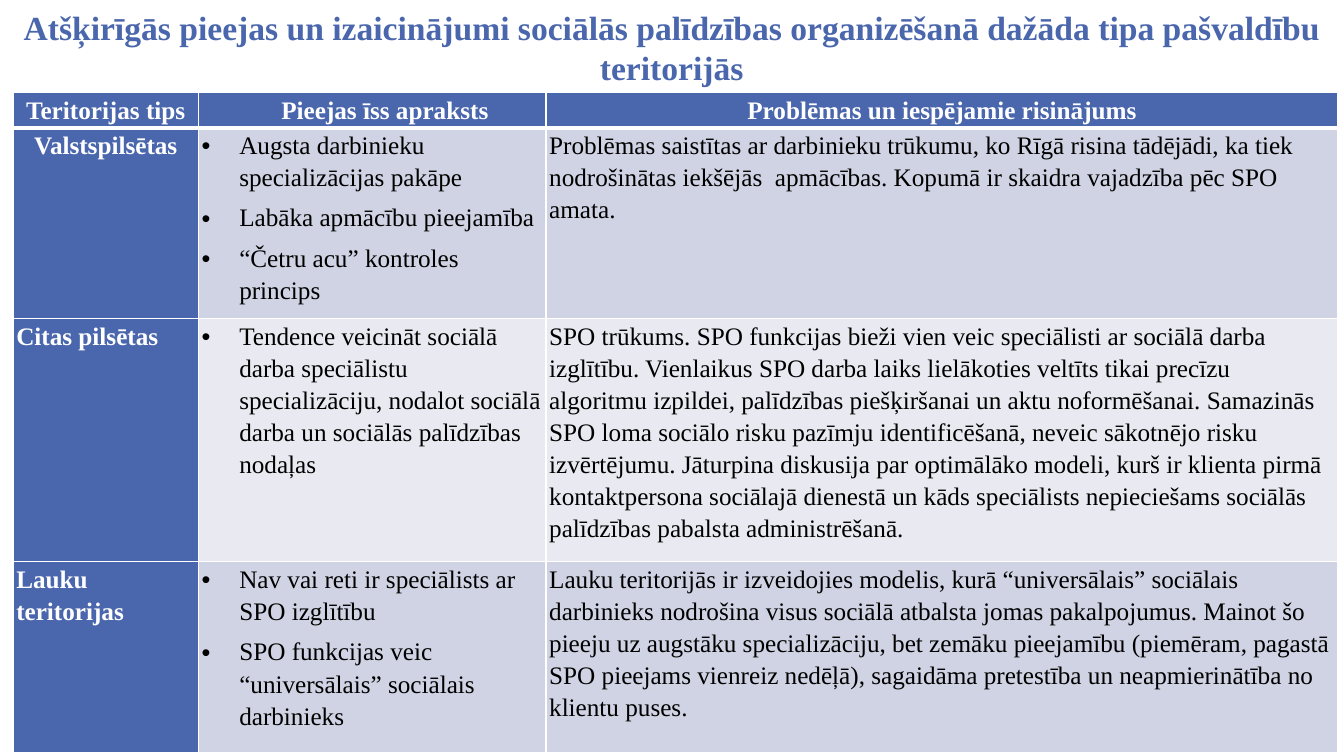
from lxml import etree
from pptx import Presentation
from pptx.dml.color import RGBColor
from pptx.enum.text import MSO_ANCHOR, PP_ALIGN
from pptx.oxml.ns import qn
from pptx.util import Cm, Pt

CENTER, LEFT = PP_ALIGN.CENTER, PP_ALIGN.LEFT
TOP = MSO_ANCHOR.TOP

COLORS = {"blue": "4A66AC", "white": "FFFFFF", "black": "000000",
          "dark_band": "D0D3E3", "light_band": "E9EAF1"}
FONT = "Times New Roman"
TITLE = ("Atšķirīgās pieejas un izaicinājumi sociālās palīdzības organizēšanā "
         "dažāda tipa pašvaldību teritorijās")
HEADINGS = ["Teritorijas tips", "Pieejas īss apraksts",
            "Problēmas un iespējamie risinājums"]
# Territory, approaches, problems and solutions
TERRITORIES = [
    ("Valstspilsētas",
     ["Augsta darbinieku specializācijas pakāpe",
      "Labāka apmācību pieejamība",
      "“Četru acu” kontroles princips"],
     "Problēmas saistītas ar darbinieku trūkumu, ko Rīgā risina tādējādi, ka tiek "
     "nodrošinātas iekšējās  apmācības. Kopumā ir skaidra vajadzība pēc SPO amata."),
    ("Citas pilsētas",
     ["Tendence veicināt sociālā darba speciālistu specializāciju, nodalot sociālā "
      "darba un sociālās palīdzības nodaļas"],
     "SPO trūkums. SPO funkcijas bieži vien veic speciālisti ar sociālā darba "
     "izglītību. Vienlaikus SPO darba laiks lielākoties veltīts tikai precīzu "
     "algoritmu izpildei, palīdzības piešķiršanai un aktu noformēšanai. Samazinās "
     "SPO loma sociālo risku pazīmju identificēšanā, neveic sākotnējo risku "
     "izvērtējumu. Jāturpina diskusija par optimālāko modeli, kurš ir klienta pirmā "
     "kontaktpersona sociālajā dienestā un kāds speciālists nepieciešams sociālās "
     "palīdzības pabalsta administrēšanā."),
    ("Lauku teritorijas",
     ["Nav vai reti ir speciālists ar SPO izglītību",
      "SPO funkcijas veic “universālais” sociālais darbinieks"],
     "Lauku teritorijās ir izveidojies modelis, kurā “universālais” sociālais "
     "darbinieks nodrošina visus sociālā atbalsta jomas pakalpojumus. Mainot šo "
     "pieeju uz augstāku specializāciju, bet zemāku pieejamību (piemēram, pagastā "
     "SPO pieejams vienreiz nedēļā), sagaidāma pretestība un neapmierinātība no "
     "klientu puses."),
]
COLUMN_WIDTHS = [4.67, 8.76, 19.96]
ROW_HEIGHTS = [0.81, 4.72, 6.05, 4.8]


def set_values(target, values):
    for name, value in values.items():
        setattr(target, name, value)


def add_span(para, text, size, color, bold):
    span = para.add_run()
    span.text = text
    set_values(span.font, {"name": FONT, "size": Pt(size), "bold": bold})
    span.font.color.rgb = RGBColor.from_string(COLORS[color])


def set_indent(para, left, first=0, bullet=None):
    properties = para._p.get_or_add_pPr()
    properties.set("marL", str(Cm(left)))
    properties.set("indent", str(Cm(first)))
    if bullet:
        etree.SubElement(properties, qn("a:buFont"), typeface="Arial")
        etree.SubElement(properties, qn("a:buChar"), char=bullet)


def set_borders(cell, bottom):
    properties = cell._tc.get_or_add_tcPr()
    for side, width in (("L", 1), ("R", 1), ("T", 1), ("B", bottom)):
        line = etree.SubElement(properties, qn(f"a:ln{side}"), w=str(Pt(width)))
        fill = etree.SubElement(line, qn("a:solidFill"))
        etree.SubElement(fill, qn("a:srgbClr"), val=COLORS["white"])


def fill_cell(cell, texts, fill, color="black", bold=False, align=LEFT,
              indent=None, border=1):
    set_borders(cell, border)
    cell.fill.solid()
    cell.fill.fore_color.rgb = RGBColor.from_string(COLORS[fill])
    set_values(cell, {"margin_left": Cm(0.08), "margin_right": Cm(0.08),
                      "margin_top": 0, "margin_bottom": 0,
                      "vertical_anchor": TOP})
    frame = cell.text_frame
    for index, text in enumerate(texts):
        para = frame.add_paragraph() if index else frame.paragraphs[0]
        if indent:
            set_indent(para, *indent)
        set_values(para, {"alignment": align, "line_spacing": 1.15,
                          "space_after": Pt(6)})
        add_span(para, text, 18, color, bold)


def add_title(page, left, top, width, height):
    box = page.shapes.add_textbox(Cm(left), Cm(top), Cm(width), Cm(height))
    frame = box.text_frame
    set_values(frame, {"word_wrap": True, "vertical_anchor": TOP,
                       "margin_top": Cm(0.22), "margin_bottom": 0})
    para = frame.paragraphs[0]
    para.alignment = CENTER
    add_span(para, TITLE, 24, "blue", True)


def add_territory_table(page, left, top, width, height):
    table = page.shapes.add_table(len(ROW_HEIGHTS), len(COLUMN_WIDTHS), Cm(left),
                                  Cm(top), Cm(width), Cm(height)).table
    for column, share in zip(table.columns, COLUMN_WIDTHS):
        column.width = Cm(width * share / sum(COLUMN_WIDTHS))
    for row, share in zip(table.rows, ROW_HEIGHTS):
        row.height = Cm(height * share / sum(ROW_HEIGHTS))

    # Header row
    for index, heading in enumerate(HEADINGS):
        fill_cell(table.cell(0, index), [heading], "blue", "white", True, CENTER,
                  indent=(0.64,) if index == 1 else None, border=3)

    # One row for each type of territory
    for index, (territory, approaches, problems) in enumerate(TERRITORIES, 1):
        band = "dark_band" if index % 2 else "light_band"
        fill_cell(table.cell(index, 0), [territory], "blue", "white", True,
                  CENTER if index == 1 else LEFT)
        fill_cell(table.cell(index, 1), approaches, band, indent=(0.95, -0.95, "•"))
        fill_cell(table.cell(index, 2), [problems], band)


def main():
    deck = Presentation()
    set_values(deck, {"slide_width": Cm(33.87), "slide_height": Cm(19.05)})
    page = deck.slides.add_slide(deck.slide_layouts[6])
    add_title(page, 0.33, -0.05, 33.2, 1.96)
    add_territory_table(page, 0.33, 2.34, 33.39, 16.38)
    deck.save("out.pptx")


if __name__ == "__main__":
    main()
